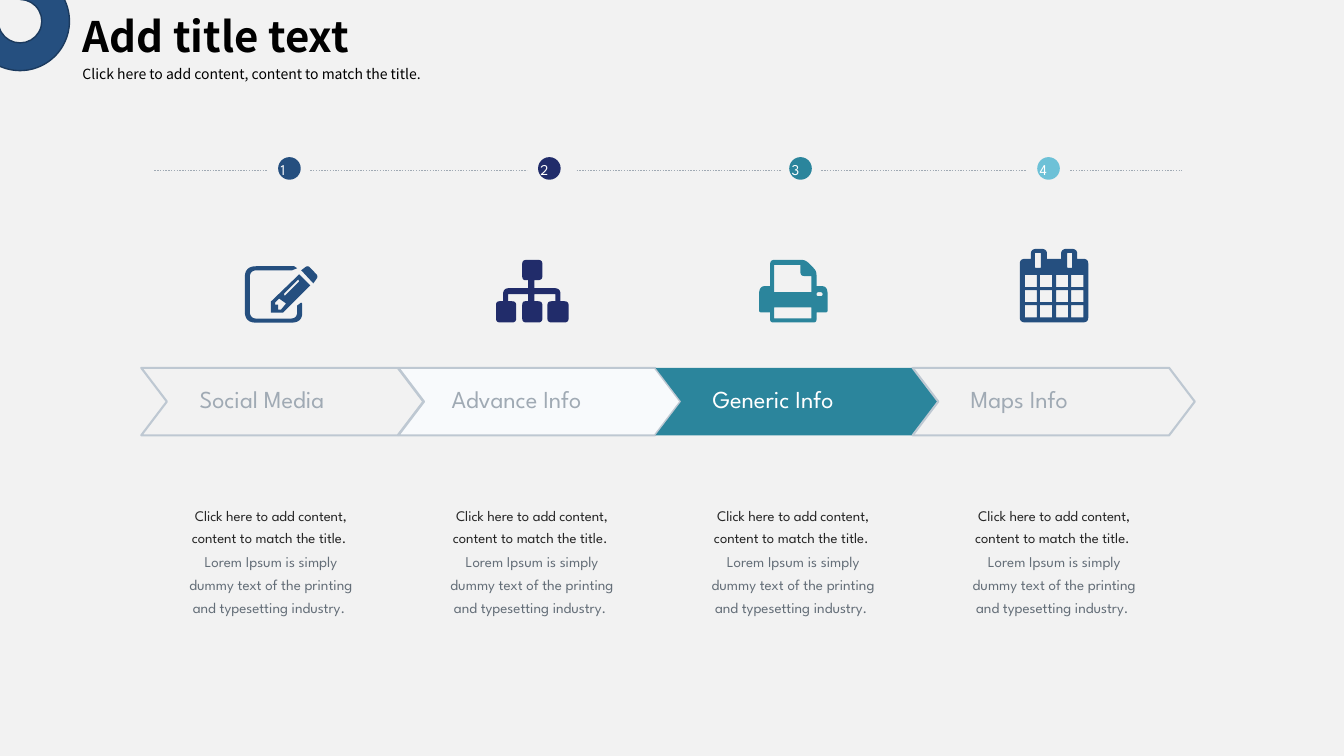
from dataclasses import dataclass

from lxml import etree
from pptx import Presentation
from pptx.dml.color import RGBColor
from pptx.enum import dml, shapes, text
from pptx.oxml.ns import qn
from pptx.util import Cm, Pt


@dataclass(frozen=True)
class Theme:
    heading_font: str = "Noto Sans CJK SC"
    body_font: str = "League Spartan"
    background: str = "F2F2F2"
    black: str = "000000"
    white: str = "FFFFFF"
    navy: str = "254F7F"
    navy_edge: str = "1B3A5E"
    indigo: str = "212C6A"
    teal: str = "2B859C"
    sky: str = "6DC1D7"
    pale: str = "F8FAFC"
    border: str = "BEC8D2"
    muted: str = "A0AAB4"
    lead: str = "262626"
    detail: str = "646E78"
    title_size: float = 30
    subtitle_size: float = 10
    number_size: float = 10.7
    label_size: float = 17.4
    lead_size: float = 10.5
    detail_size: float = 10.7


theme = Theme()

# Content; lengths are centimetres
TITLE = "Add title text"
SUBTITLE = "Click here to add content, content to match the title."
LEAD = "Click here to add content, content to match the title. "
DETAIL = "Lorem Ipsum is simply dummy text of the printing and typesetting industry. "

# Number, left edge, colour
DOTS = [("1", 7.01, theme.navy), ("2", 13.56, theme.indigo),
        ("3", 19.89, theme.teal), ("4", 26.14, theme.sky)]
# Start, end
TIMELINE = [(3.89, 6.73), (7.82, 13.28), (14.53, 19.69), (20.7, 25.86), (26.97, 29.79)]
# Label, label left, label width, fill, border, label colour
STEPS = [("Social Media", 5.03, 3.81, None, theme.border, theme.muted),
         ("Advance Info", 11.38, 5.13, theme.pale, theme.border, theme.muted),
         ("Generic Info", 17.96, 3.81, theme.teal, None, theme.white),
         ("Maps Info", 24.46, 3.81, None, theme.border, theme.muted)]


def rectangle(left, top, right, bottom, radius=0):
    return [(left, top, radius), (right, top, radius),
            (right, bottom, radius), (left, bottom, radius)]


# Icon outlines: corners as x, y and optional radius, in icon units
ICON_UNIT = 0.0254
PENCIL = [
    [(0, 0, 11), (49, 0), (52, 2), (47, 4), (5, 4, 7), (5, 52, 7), (52, 52, 7),
     (52, 39), (56, 36), (57, 37), (57, 56, 11), (0, 56, 11)],
    [(65, 19), (38, 46), (26, 46), (26, 35), (54, 8)],
    [(41, 37), (34, 32), (30, 36), (30, 38), (33, 38), (33, 43), (36, 43)],
    [(53, 13), (39, 27), (39, 29), (40, 29), (54, 15)],
    [(68, 17), (56, 4), (62.5, -1, 3), (73, 10, 3)],
]
HIERARCHY = [
    [(26, 0, 4), (46, 0, 4), (46, 20, 4), (38, 20), (38, 28), (64, 28, 6), (64, 41),
     (72, 41, 4), (72, 62, 4), (51, 62, 4), (51, 41, 4), (59, 41), (59, 34), (38, 34),
     (38, 41), (46, 41, 4), (46, 62, 4), (26, 62, 4), (26, 41, 4), (32, 41), (32, 34),
     (12, 34), (12, 41), (20, 41, 4), (20, 62, 4), (0, 62, 4), (0, 41, 4), (7, 41),
     (7, 28, 6), (32, 28), (32, 20), (26, 20, 4)],
]
PRINTER = [
    [(0, 26, 8), (11, 26), (11, 0, 4), (46, 0, 4), (57, 11, 4), (57, 26), (68, 26, 8),
     (68, 52, 2), (57, 52), (57, 62, 3), (11, 62, 3), (11, 52), (0, 52, 2)],
    [(15, 5), (41, 5), (41, 16, 4), (52, 16), (52, 32), (15, 32)],
    rectangle(15, 47, 52, 58),
    rectangle(57, 32, 63, 36, 2),
]
CALENDAR = [
    [(0, 10, 5), (11, 10), (11, 0, 6), (27, 0, 6), (27, 10), (41, 10), (41, 0, 6),
     (57, 0, 6), (57, 10), (68, 10, 5), (68, 73, 5), (0, 73, 5)],
    rectangle(15, 4, 21, 19, 1),
    rectangle(47, 4, 52, 19, 1),
] + [rectangle(x, y, x + 12, y + 12) for y in (26, 41, 56) for x in (5, 20, 36, 51)]
# Outline, left, top, colour
ICONS = [(CALENDAR, 25.7, 6.27, theme.navy), (PRINTER, 19.13, 6.55, theme.teal),
         (PENCIL, 6.17, 6.71, theme.navy), (HIERARCHY, 12.5, 6.55, theme.indigo)]


def paint(shape, fill=None, line=None, width=1):
    shape.shadow.inherit = False
    if fill:
        shape.fill.solid()
        shape.fill.fore_color.rgb = RGBColor.from_string(fill)
    else:
        shape.fill.background()
    if line:
        shape.line.color.rgb = RGBColor.from_string(line)
        shape.line.width = Pt(width)
    else:
        shape.line.fill.background()


def style(para, font, size, color, spacing=1.0, align=text.PP_ALIGN.LEFT, bold=False):
    para.alignment, para.line_spacing = align, spacing
    for span in para.runs:
        span.font.name, span.font.size, span.font.bold = font, Pt(size), bold
        span.font.color.rgb = RGBColor.from_string(color)


def add_text(page, content, left, top, width, height):
    """Add a wrapped, vertically centred box without margins."""
    box = page.shapes.add_textbox(Cm(left), Cm(top), Cm(width), Cm(height))
    frame = box.text_frame
    frame.word_wrap = True
    frame.vertical_anchor = text.MSO_ANCHOR.MIDDLE
    frame.margin_left = frame.margin_top = frame.margin_right = frame.margin_bottom = 0
    frame.text = content
    return frame


def rounded(corners, samples=6):
    """Replace every corner that has a radius by points on a short curve."""
    points = []
    for i, (x, y, *radius) in enumerate(corners):
        if not radius or not radius[0]:
            points.append((x, y))
            continue
        ends = []
        for nx, ny, *_ in (corners[i - 1], corners[(i + 1) % len(corners)]):
            length = ((nx - x) ** 2 + (ny - y) ** 2) ** 0.5
            share = min(radius[0] / length, 0.5)
            ends.append((x + (nx - x) * share, y + (ny - y) * share))
        (ax, ay), (bx, by) = ends
        for step in range(samples + 1):
            t = step / samples
            a, m, b = (1 - t) ** 2, 2 * t * (1 - t), t ** 2
            points.append((a * ax + m * x + b * bx, a * ay + m * y + b * by))
    return points


def add_icon(page, outline, left, top, color):
    contours = [[(Cm(left + x * ICON_UNIT), Cm(top + y * ICON_UNIT))
                 for x, y in rounded(corners)] for corners in outline]
    builder = page.shapes.build_freeform(*contours[0][0])
    builder.add_line_segments(contours[0][1:])
    for contour in contours[1:]:
        builder.move_to(*contour[0])
        builder.add_line_segments(contour[1:])
    paint(builder.convert_to_shape(), color)


def add_heading(page):
    title = page.shapes.title
    title.left, title.top, title.width, title.height = Cm(1.83), Cm(0.15), Cm(8.92), Cm(1.55)
    title.text_frame.text = TITLE
    title.text_frame.auto_size = text.MSO_AUTO_SIZE.NONE
    title.text_frame.vertical_anchor = text.MSO_ANCHOR.TOP
    style(title.text_frame.paragraphs[0], theme.heading_font, theme.title_size,
          theme.black, bold=True)
    subtitle = page.shapes.add_textbox(Cm(1.83), Cm(1.32), Cm(10.95), Cm(0.81))
    subtitle.text_frame.word_wrap = True
    subtitle.text_frame.text = SUBTITLE
    style(subtitle.text_frame.paragraphs[0], theme.heading_font, theme.subtitle_size,
          theme.black, 1.5)
    ring = page.shapes.add_shape(shapes.MSO_SHAPE.BLOCK_ARC, Cm(-0.74), Cm(-0.71), Cm(2.49), Cm(2.49))
    for i, value in enumerate((108, 46, 0.28)):
        ring.adjustments[i] = value
    ring.rotation = 90
    paint(ring, theme.navy, theme.navy_edge)


def add_timeline(page):
    for number, left, color in DOTS:
        dot = page.shapes.add_shape(shapes.MSO_SHAPE.OVAL, Cm(left), Cm(3.96), Cm(0.57), Cm(0.57))
        paint(dot, color)
        frame = add_text(page, number, left + 0.06, 3.99, 0.38, 0.56)
        style(frame.paragraphs[0], theme.body_font, theme.number_size, theme.white)
    for start, end in TIMELINE:
        line = page.shapes.add_connector(shapes.MSO_CONNECTOR.STRAIGHT, Cm(start), Cm(4.29), Cm(end), Cm(4.29))
        line.line.color.rgb = RGBColor.from_string(theme.muted)
        line.line.width = Pt(1)
        line.line.dash_style = dml.MSO_LINE.ROUND_DOT
        etree.SubElement(line._element.spPr, qn("a:effectLst"))


def add_steps(page):
    for i, (label, left, width, fill, border, color) in enumerate(STEPS):
        frame = add_text(page, f"{LEAD}\n{DETAIL}", 4.67 + 6.58 * i, 12.42, 4.32, 3.33)
        looks = ((theme.lead_size, theme.lead), (theme.detail_size, theme.detail))
        for para, (size, shade) in zip(frame.paragraphs, looks):
            style(para, theme.body_font, size, shade, 1.3, text.PP_ALIGN.CENTER)
        arrow = page.shapes.add_shape(shapes.MSO_SHAPE.CHEVRON, Cm(3.56 + 6.48 * i), Cm(9.27), Cm(7.11), Cm(1.7))
        arrow.adjustments[0] = 0.38
        paint(arrow, fill, border, 1.5)
        frame = add_text(page, label, left, 9.65, width, 0.89)
        style(frame.paragraphs[0], theme.body_font, theme.label_size, color, 0.9)


deck = Presentation()
deck.slide_width, deck.slide_height = Cm(33.87), Cm(19.05)
page = deck.slides.add_slide(deck.slide_layouts[5])
page.background.fill.solid()
page.background.fill.fore_color.rgb = RGBColor.from_string(theme.background)
add_heading(page)
add_timeline(page)
add_steps(page)
for icon in ICONS:
    add_icon(page, *icon)
deck.save("out.pptx")
